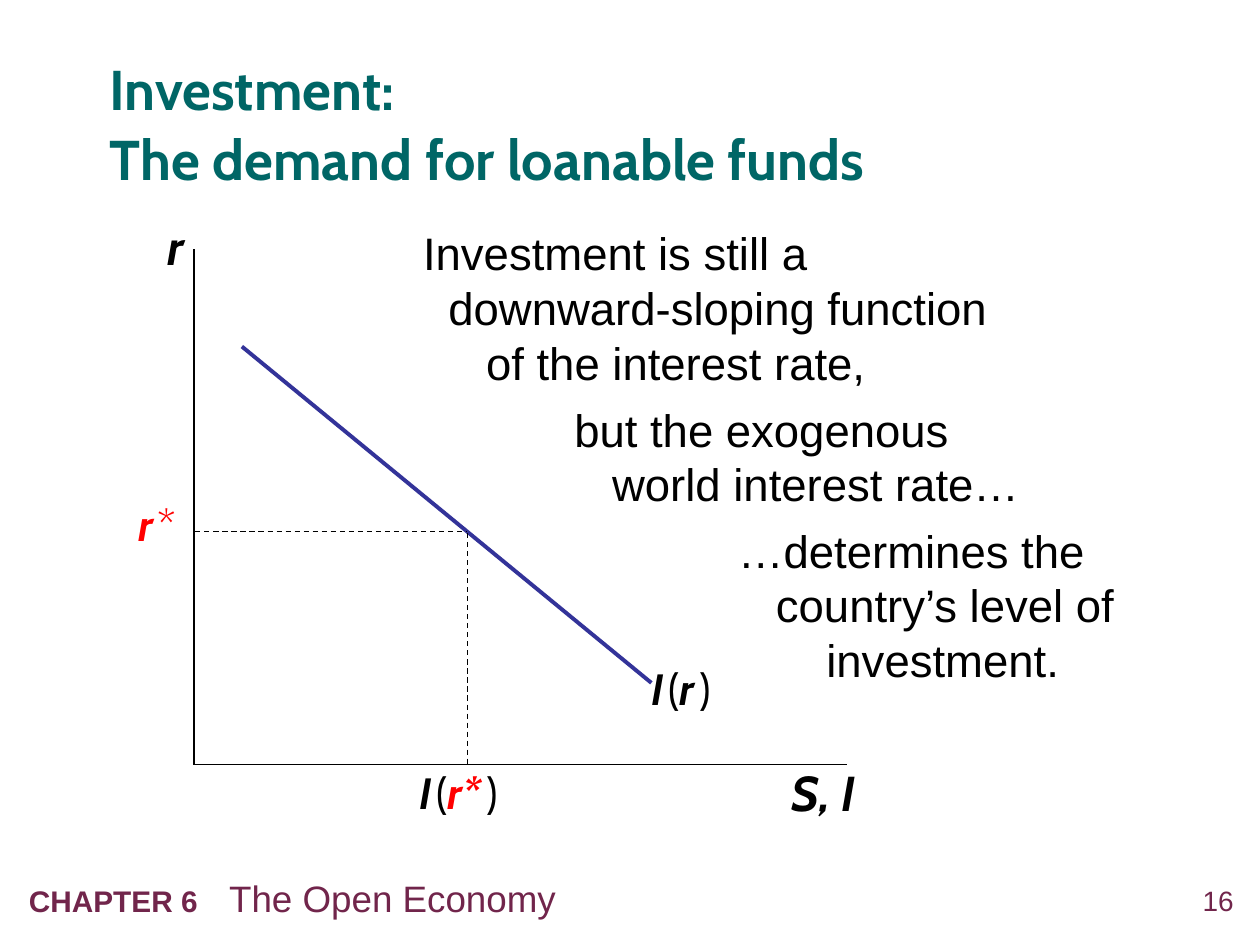
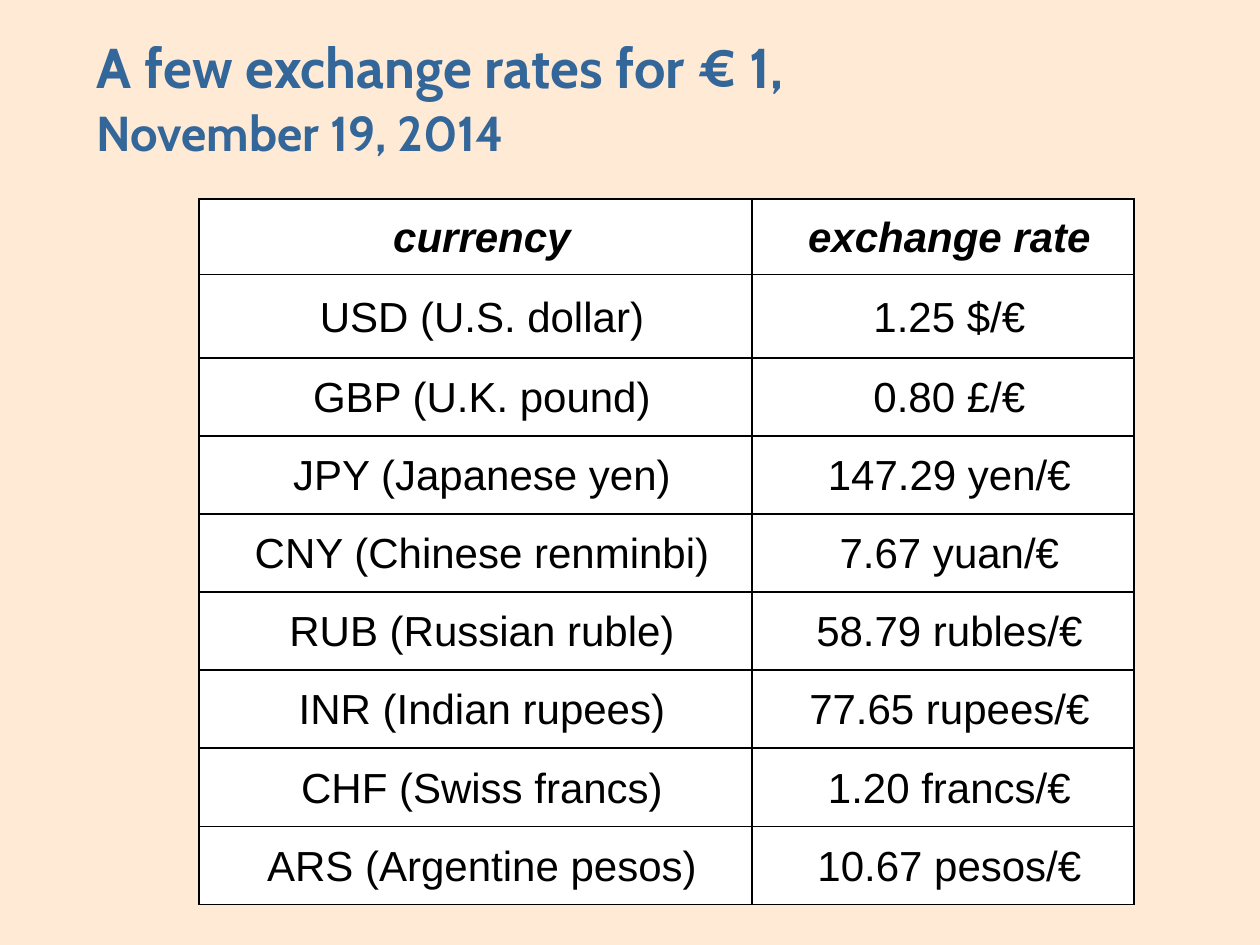
from lxml.etree import SubElement
from pptx import Presentation
from pptx.dml.color import RGBColor
from pptx.enum.dml import MSO_LINE
from pptx.enum.shapes import MSO_CONNECTOR
from pptx.enum.text import MSO_ANCHOR, PP_ALIGN
from pptx.oxml.ns import qn
from pptx.util import Inches, Pt

BLACK = RGBColor(0, 0, 0)
WHITE = RGBColor(255, 255, 255)
RED = RGBColor(255, 0, 0)
TEAL = RGBColor(0x00, 0x66, 0x66)
STEEL = RGBColor(0x33, 0x66, 0x99)
PLUM = RGBColor(0x71, 0x25, 0x4B)
INDIGO = RGBColor(0x33, 0x33, 0x99)
PEACH = RGBColor(0xFF, 0xEA, 0xD5)
BODY_FONT = "Arial"
ACCENT_FONT = "Cabin"
STANDARD_INSETS = (0.1, 0.05, 0.1, 0.05)
NO_INSETS = (0, 0, 0, 0)
LABEL_INSETS = (0, 0, 0, 0.1)


def add_spans(para, spans, font):
    for text, size, color, bold, italic in spans:
        span = para.add_run()
        span.text = text
        span.font.name = font
        span.font.size = Pt(size)
        span.font.color.rgb = color
        span.font.bold = bold
        span.font.italic = italic


def add_text(page, place, lines, font, insets=STANDARD_INSETS,
             align=PP_ALIGN.LEFT, anchor=MSO_ANCHOR.TOP, spacing=1.0):
    box = page.shapes.add_textbox(*[Inches(length) for length in place])
    frame = box.text_frame
    frame.word_wrap = True
    frame.vertical_anchor = anchor
    (frame.margin_left, frame.margin_top,
     frame.margin_right, frame.margin_bottom) = [Inches(inset) for inset in insets]
    for number, spans in enumerate(lines):
        para = frame.add_paragraph() if number else frame.paragraphs[0]
        para.alignment = align
        para.line_spacing = spacing
        add_spans(para, spans, font)
    return box


deck = Presentation()
deck.slide_width = Inches(10)
deck.slide_height = Inches(7.5)

titles = [
    (WHITE, TEAL, (0.87, 0.49, 8.24, 0.95),
     [("Investment:", 32), ("The demand for loanable funds", 32)]),
    (PEACH, STEEL, (0.77, 0.24, 8.76, 1.03),
     [("A few exchange rates for € 1,", 32), ("November 19, 2014", 28)]),
]
pages = []
for background, color, place, title_lines in titles:
    page = deck.slides.add_slide(deck.slide_layouts[6])
    page.background.fill.solid()
    page.background.fill.fore_color.rgb = background
    add_text(page, place,
             [[(text, size, color, True, False)] for text, size in title_lines],
             ACCENT_FONT, NO_INSETS, anchor=MSO_ANCHOR.MIDDLE, spacing=1.05)
    pages.append(page)
graph_page, rates_page = pages

add_text(graph_page, (9.24, 7.01, 0.55, 0.32), [[("16", 16, PLUM, False, False)]],
         BODY_FONT, NO_INSETS, PP_ALIGN.RIGHT)
footer = add_text(graph_page, (0.13, 6.9, 8.18, 0.45),
                  [[("CHAPTER 6\t", 17, PLUM, True, False),
                    ("The Open Economy", 21, PLUM, False, False)]], BODY_FONT)
footer_properties = footer.text_frame.paragraphs[0]._p.get_or_add_pPr()
tab_list = SubElement(footer_properties, qn("a:tabLst"))
SubElement(tab_list, qn("a:tab"), pos=str(Inches(1.59)), algn="l")

remarks = [
    ((3.26, 1.74, 4.83, 1.4), [("Investment is still a", 0),
                               ("downward-sloping function", 0.2),
                               ("of the interest rate,", 0.5)]),
    ((4.46, 3.14, 4.17, 0.97), [("but the exogenous", 0),
                                ("world interest rate…", 0.3)]),
    ((5.76, 4.1, 3.25, 1.4), [("…determines the", 0),
                              ("country’s level of", 0.3),
                              ("investment.", 0.7)]),
]
for place, steps in remarks:
    box = add_text(graph_page, place,
                   [[(text, 26, BLACK, False, False)] for text, indent in steps],
                   BODY_FONT)
    for para, (text, indent) in zip(box.text_frame.paragraphs, steps):
        para._p.get_or_add_pPr().set("marL", str(Inches(indent)))

graph_lines = [
    (1.54, 1.98, 1.54, 6.07, BLACK, 0.75, False),
    (1.54, 6.07, 6.72, 6.07, BLACK, 0.75, False),
    (1.92, 2.75, 5.17, 5.42, INDIGO, 2.25, False),
    (1.55, 4.22, 3.71, 4.22, BLACK, 0.75, True),
    (3.71, 4.23, 3.71, 6.07, BLACK, 0.75, True),
]
for *ends, color, weight, dashed in graph_lines:
    line = graph_page.shapes.add_connector(
        MSO_CONNECTOR.STRAIGHT, *[Inches(end) for end in ends])
    line.line.color.rgb = color
    line.line.width = Pt(weight)
    if dashed:
        line.line.dash_style = MSO_LINE.DASH
    SubElement(line._element.spPr, qn("a:effectLst"))

for text, place in [("r", (1.17, 1.67, 0.45, 0.57)), ("S, I", (6.07, 6, 0.93, 0.57))]:
    add_text(graph_page, place, [[(text, 28, BLACK, True, True)]],
             ACCENT_FONT, align=PP_ALIGN.CENTER)

add_text(graph_page, (1, 3.9, 0.67, 0.52),
         [[("r", 25, RED, True, True), (" ", 11, RED, True, True),
           ("*", 25, RED, False, False)]], ACCENT_FONT)

for rate, color, place in [("r*", RED, (3.33, 6.08, 1, 0.52)),
                           ("r", BLACK, (5.17, 5.25, 0.75, 0.52))]:
    add_text(graph_page, place,
             [[("I", 25, BLACK, True, True), (" ", 12, BLACK, True, True),
               ("(", 25, BLACK, False, False), (rate, 25, color, True, True),
               (" ", 12, color, True, True), (")", 25, BLACK, False, False)]],
             ACCENT_FONT, LABEL_INSETS)

rates = [
    ("currency", "exchange rate"),
    ("USD (U.S. dollar)", "1.25 $/€"),
    ("GBP (U.K. pound)", "0.80 £/€"),
    ("JPY (Japanese yen)", "147.29 yen/€"),
    ("CNY (Chinese renminbi)", "7.67 yuan/€"),
    ("RUB (Russian ruble)", "58.79 rubles/€"),
    ("INR (Indian rupees)", "77.65 rupees/€"),
    ("CHF (Swiss francs)", "1.20 francs/€"),
    ("ARS (Argentine pesos)", "10.67 pesos/€"),
]
table = rates_page.shapes.add_table(
    len(rates), 2, Inches(1.58), Inches(1.58), Inches(7.42), Inches(5.63)).table
table.columns[0].width = Inches(4.39)
table.columns[1].width = Inches(3.03)
row_heights = [0.6, 0.66] + [0.62] * 7
for row_number, (row, height) in enumerate(zip(rates, row_heights)):
    table.rows[row_number].height = Inches(height)
    heading = row_number == 0
    for column_number, text in enumerate(row):
        cell = table.cell(row_number, column_number)
        cell.margin_left = Inches(0.2)
        cell.margin_right = Inches(0.1)
        cell.margin_top = cell.margin_bottom = Inches(0.05)
        cell.vertical_anchor = MSO_ANCHOR.MIDDLE
        para = cell.text_frame.paragraphs[0]
        para.alignment = PP_ALIGN.CENTER
        para.line_spacing = 1.05
        add_spans(para, [(text, 24, BLACK, heading, heading)], BODY_FONT)
        cell_properties = cell._tc.get_or_add_tcPr()
        for side in ("a:lnL", "a:lnR", "a:lnT", "a:lnB"):
            border = SubElement(cell_properties, qn(side), w=str(Pt(1)))
            border_fill = SubElement(border, qn("a:solidFill"))
            SubElement(border_fill, qn("a:srgbClr"), val=str(BLACK))
        cell.fill.solid()
        cell.fill.fore_color.rgb = WHITE

deck.save("out.pptx")
